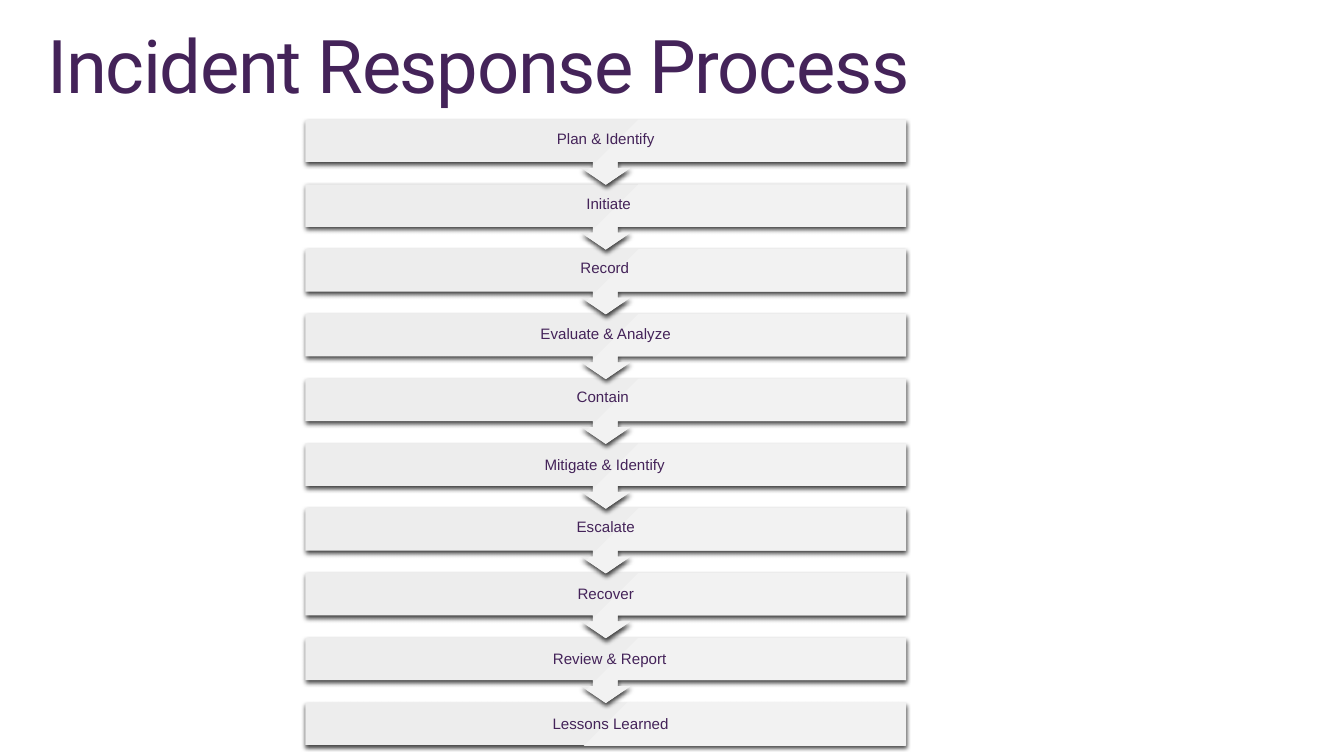
from lxml import etree
from pptx import Presentation
from pptx import util as u
from pptx.dml.color import RGBColor
from pptx.enum import text
from pptx.oxml import ns

INK = {"plum": "442359", "pale": "EDEDED", "light": "F2F2F2", "black": "000000"}

deck = Presentation()
deck.slide_width, deck.slide_height = u.Inches(13.6), u.Inches(7.65)
slide = deck.slides.add_slide(deck.slide_layouts[6])


def write(words, left, top, wide, high, size, font):
    box = slide.shapes.add_textbox(*map(u.Inches, (left, top, wide, high)))
    frame = box.text_frame
    frame.text = words
    face = frame.paragraphs[0].runs[0].font
    face.size, face.name = u.Pt(size), font
    face.color.rgb = RGBColor.from_string(INK["plum"])
    return frame


def shade(shape):
    fx = etree.SubElement(shape.element.spPr, ns.qn("a:effectLst"))
    cast = etree.SubElement(fx, ns.qn("a:outerShdw"), blurRad=str(u.Pt(3)),
                            dist=str(u.Pt(2)), dir="5400000", rotWithShape="0")
    tone = etree.SubElement(cast, ns.qn("a:srgbClr"), val=INK["black"])
    etree.SubElement(tone, ns.qn("a:alpha"), val="75000")


# Title
title = write("Incident Response Process", 0.32, 0.2, 12.26, 1, 54, "Roboto")
title.word_wrap = True
title.vertical_anchor = text.MSO_ANCHOR.MIDDLE
title.margin_left = title.margin_right = u.Inches(0.16)
title.margin_top = title.margin_bottom = u.Inches(0.1)
line = title.paragraphs[0]
line.line_spacing = 0.9
line.runs[0].font._element.set("spc", "-100")

# Steps: label, its centre, and its drop below the top of the bar
steps = [
    ("Plan & Identify", 6.13, 0.05), ("Initiate", 6.16, 0.05),
    ("Record", 6.12, 0.04), ("Evaluate & Analyze", 6.13, 0.06),
    ("Contain", 6.1, 0.04), ("Mitigate & Identify", 6.12, 0.07),
    ("Escalate", 6.13, 0.04), ("Recover", 6.13, 0.07),
    ("Review & Report", 6.17, 0.07), ("Lessons Learned", 6.18, 0.07),
]
LEFT, RIGHT, MID = 3.09, 9.17, 6.13
FIRST, LAST, BAR = 1.21, 7.11, 0.43
last = len(steps) - 1
tops = [FIRST + row * (LAST - FIRST) / last for row in range(len(steps))]

# Bars, from the bottom up; all but the last carry a down arrow
for row in reversed(range(len(steps))):
    top = tops[row]
    base, head = top + BAR, top + 0.49
    arrow = [(MID + 0.12, base), (MID + 0.12, head), (MID + 0.25, head),
             (MID, top + 0.66),
             (MID - 0.25, head), (MID - 0.13, head), (MID - 0.13, base)]
    edge = [(RIGHT, base)] + (arrow if row < last else [])
    edge += [(LEFT, base), (LEFT, top), (RIGHT, top)]
    dots = [(u.Inches(x), u.Inches(y)) for x, y in edge]
    pen = slide.shapes.build_freeform(*dots[0])
    pen.add_line_segments(dots[1:], close=True)
    bar = pen.convert_to_shape()
    bar.fill.gradient()
    bar.fill.gradient_angle = 315
    for stop, tint in zip(bar.fill.gradient_stops, ("pale", "light")):
        stop.color.rgb = RGBColor.from_string(INK[tint])
    bar.line.fill.background()
    shade(bar)

# Labels
WIDE = 2.6
for (words, mid, drop), top in zip(steps, tops):
    label = write(words, mid - WIDE / 2, top + drop, WIDE, 0.32, 11, "Arial")
    label.word_wrap = False
    label.auto_size = text.MSO_AUTO_SIZE.SHAPE_TO_FIT_TEXT
    label.paragraphs[0].alignment = text.PP_ALIGN.CENTER

deck.save("out.pptx")
